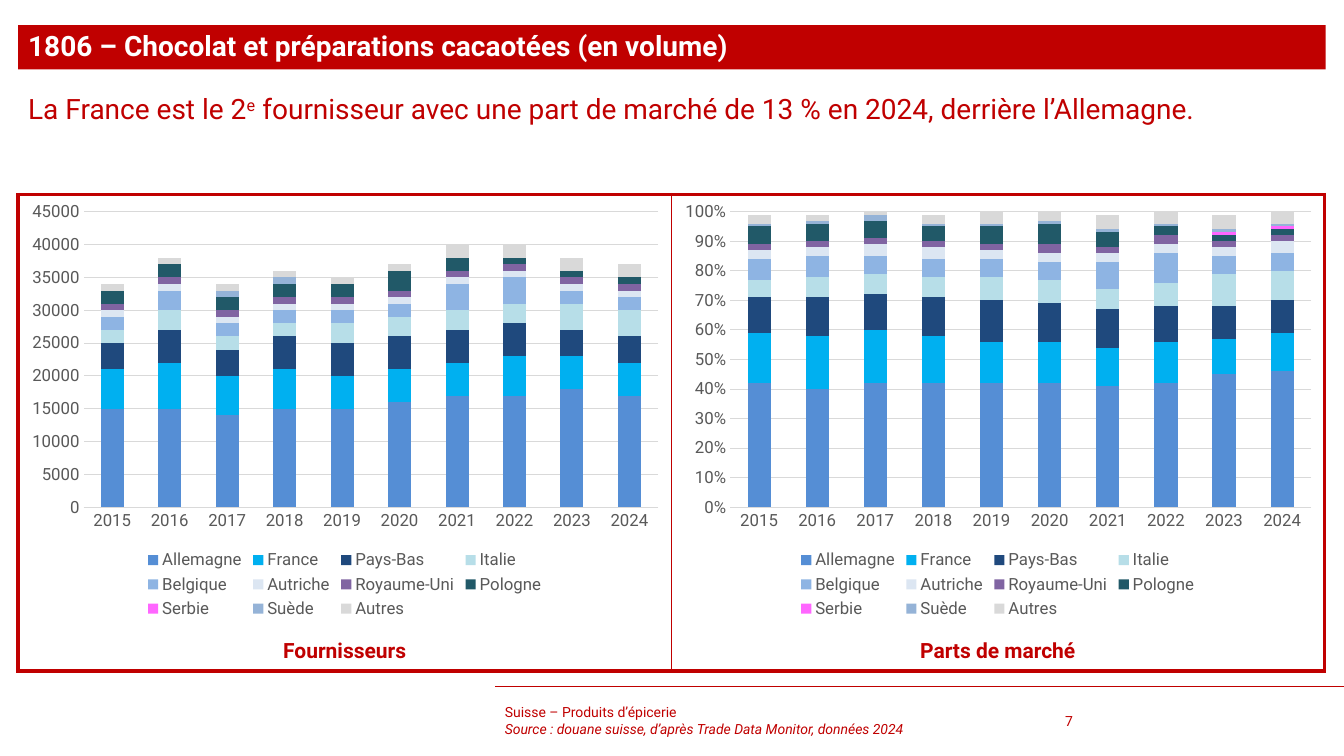
from dataclasses import dataclass

from lxml import etree
from pptx import Presentation
from pptx.chart.data import CategoryChartData
from pptx.dml.color import RGBColor
from pptx.enum.chart import XL_CHART_TYPE, XL_LEGEND_POSITION, XL_TICK_MARK
from pptx.enum.shapes import MSO_CONNECTOR, MSO_SHAPE
from pptx.enum.text import MSO_ANCHOR, MSO_AUTO_SIZE, PP_ALIGN
from pptx.oxml import parse_xml
from pptx.oxml.ns import nsdecls, qn
from pptx.util import Pt

STACKED = XL_CHART_TYPE.COLUMN_STACKED
BOTTOM = XL_LEGEND_POSITION.BOTTOM
NO_TICK = XL_TICK_MARK.NONE
STRAIGHT = MSO_CONNECTOR.STRAIGHT
RECTANGLE = MSO_SHAPE.RECTANGLE
TOP, MIDDLE = MSO_ANCHOR.TOP, MSO_ANCHOR.MIDDLE
GROW = MSO_AUTO_SIZE.SHAPE_TO_FIT_TEXT
LEFT, CENTER = PP_ALIGN.LEFT, PP_ALIGN.CENTER


@dataclass(frozen=True)
class Theme:
    font: str = "Roboto"
    red: str = "C00000"
    white: str = "FFFFFF"
    label: str = "595959"
    grid: str = "D9D9D9"
    heading: float = 20
    caption: float = 15
    chart: float = 12
    footer: float = 10


def rgb(code):
    return RGBColor.from_string(code)


def set_layout(parent, position, frame, inner=False):
    """Place a chart part by fractions of the chart area."""
    for old in parent.findall(qn("c:layout")):
        parent.remove(old)
    target = '<c:layoutTarget val="inner"/>' if inner else ""
    modes = "".join(f'<c:{axis}Mode val="edge"/>' for axis in "xy")
    sizes = "".join(f'<c:{key} val="{value}"/>' for key, value in zip("xywh", frame))
    parent.insert(position, parse_xml(
        f"<c:layout {nsdecls('c')}><c:manualLayout>{target}{modes}{sizes}"
        "</c:manualLayout></c:layout>"))


class SlideBuilder:
    def __init__(self, page, theme):
        self.page = page
        self.theme = theme

    def style(self, font, color, size, **values):
        values = {"name": self.theme.font, "size": Pt(size), **values}
        for name, value in values.items():
            setattr(font, name, value)
        font.color.rgb = rgb(color)

    def fill_text(self, box, paragraphs, size, color=None, anchor=TOP, align=LEFT,
                  spacing=None, bold=False):
        """Each paragraph is a list of (text, format values) spans."""
        frame = box.text_frame
        frame.word_wrap = True
        frame.vertical_anchor = anchor
        for index, spans in enumerate(paragraphs):
            para = frame.add_paragraph() if index else frame.paragraphs[0]
            para.alignment = align
            if spacing:
                para.line_spacing = spacing
            for text, values in spans:
                span = para.add_run()
                span.text = text
                values = dict(values)
                baseline = values.pop("baseline", None)
                self.style(span.font, color or self.theme.red, size,
                           **{"bold": bold, **values})
                if baseline:
                    span._r.get_or_add_rPr().set("baseline", str(baseline))
        return box

    def text(self, place, paragraphs, size, **values):
        box = self.page.shapes.add_textbox(*map(Pt, place))
        return self.fill_text(box, paragraphs, size, **values)

    def banner(self, place, paragraphs, size, **values):
        box = self.page.shapes.add_shape(RECTANGLE, *map(Pt, place))
        box.shadow.inherit = False
        box.fill.solid()
        box.fill.fore_color.rgb = rgb(self.theme.red)
        box.line.fill.background()
        return self.fill_text(box, paragraphs, size, **values)

    def line(self, start, end, width):
        rule = self.page.shapes.add_connector(STRAIGHT, *map(Pt, start + end))
        rule.line.color.rgb = rgb(self.theme.red)
        rule.line.width = Pt(width)
        etree.SubElement(rule._element.spPr, qn("a:effectLst"))

    def frame_table(self, place, borders):
        """One-row empty table; borders holds widths per cell as L, R, T, B."""
        table = self.page.shapes.add_table(1, len(borders), *map(Pt, place)).table
        table.first_row = table.horz_banding = False
        for cell, widths in zip(table.rows[0].cells, borders):
            cell.fill.background()
            properties = cell._tc.get_or_add_tcPr()
            for index, (side, width) in enumerate(zip("LRTB", widths)):
                properties.insert(index, parse_xml(
                    f'<a:ln{side} {nsdecls("a")} w="{Pt(width)}"><a:solidFill>'
                    f'<a:srgbClr val="{self.theme.red}"/></a:solidFill></a:ln{side}>'))

    def chart(self, place, years, series, number_format, maximum, step, plot_frame):
        theme = self.theme
        data = CategoryChartData()
        data.categories = years
        for name, values in series.items():
            data.add_series(name, values)
        chart = self.page.shapes.add_chart(STACKED, *map(Pt, place), data).chart
        chart.has_title = False
        self.style(chart.font, theme.label, theme.chart)

        # Stacked columns
        plot = chart.plots[0]
        plot.gap_width, plot.overlap, plot.vary_by_categories = 150, 100, False
        for column in plot.series:
            column.format.fill.solid()
            column.format.fill.fore_color.rgb = rgb(COUNTRY_COLORS[column.name])

        # Axes
        years_axis, value_axis = chart.category_axis, chart.value_axis
        for axis in (years_axis, value_axis):
            axis.major_tick_mark = axis.minor_tick_mark = NO_TICK
            self.style(axis.tick_labels.font, theme.label, theme.chart)
        value_axis.minimum_scale = 0
        value_axis.maximum_scale = maximum
        value_axis.major_unit = step
        value_axis.tick_labels.number_format = number_format
        value_axis.tick_labels.number_format_is_linked = False
        value_axis.format.line.fill.background()
        for line in (years_axis.format.line, value_axis.major_gridlines.format.line):
            line.color.rgb = rgb(theme.grid)
            line.width = Pt(0.75)

        # Legend and plot placement
        chart.has_legend = True
        legend = chart.legend
        legend.position = BOTTOM
        legend.include_in_layout = False
        self.style(legend.font, theme.label, theme.chart)
        set_layout(legend._element, 1, (0.19, 0.82, 0.62, 0.18))
        set_layout(chart._chartSpace.chart.plotArea, 0, plot_frame, inner=True)


YEARS = [str(year) for year in range(2015, 2025)]
COUNTRY_COLORS = {
    "Allemagne": "558ED5", "France": "00B0F0", "Pays-Bas": "1F497D",
    "Italie": "B7DEE8", "Belgique": "8EB4E3", "Autriche": "DCE6F2",
    "Royaume-Uni": "8064A2", "Pologne": "215968", "Serbie": "FF66FF",
    "Suède": "95B3D7", "Autres": "D9D9D9",
}
# Thousands, one row per country
VOLUMES = [
    [15, 15, 14, 15, 15, 16, 17, 17, 18, 17],
    [6, 7, 6, 6, 5, 5, 5, 6, 5, 5],
    [4, 5, 4, 5, 5, 5, 5, 5, 4, 4],
    [2, 3, 2, 2, 3, 3, 3, 3, 4, 4],
    [2, 3, 2, 2, 2, 2, 4, 4, 2, 2],
    [1] * 10,
    [1] * 10,
    [2, 2, 2, 2, 2, 3, 2, 1, 1, 1],
    [0] * 10,
    [0, 0, 1, 1, 0, 0, 0, 0, 0, 0],
    [1, 1, 1, 1, 1, 1, 2, 2, 2, 2],
]
# Percent, one row per country
SHARES = [
    [42, 40, 42, 42, 42, 42, 41, 42, 45, 46],
    [17, 18, 18, 16, 14, 14, 13, 14, 12, 13],
    [12, 13, 12, 13, 14, 13, 13, 12, 11, 11],
    [6, 7, 7, 7, 8, 8, 7, 8, 11, 10],
    [7, 7, 6, 6, 6, 6, 9, 10, 6, 6],
    [3, 3, 4, 4, 3, 3, 3, 3, 3, 4],
    [2, 2, 2, 2, 2, 3, 2, 3, 2, 2],
    [6, 6, 6, 5, 6, 7, 5, 3, 2, 2],
    [0, 0, 0, 0, 0, 0, 0, 0, 1, 1],
    [1, 1, 2, 1, 1, 1, 1, 1, 1, 1],
    [3, 2, 3, 3, 4, 3, 5, 5, 5, 5],
]
MARGIN, PANEL_TOP, PANEL_WIDTH = 13, 139, 466.5


def main():
    deck = Presentation()
    deck.slide_width, deck.slide_height = Pt(960), Pt(540)
    theme = Theme()
    slide = SlideBuilder(deck.slides.add_slide(deck.slide_layouts[6]), theme)

    # Footer rule and two-panel frame
    slide.line((960, 490.3), (353.5, 490.3), 0.5)
    slide.frame_table((MARGIN, PANEL_TOP, 2 * PANEL_WIDTH, 340.5),
                      [(3, 1, 3, 3), (1, 3, 3, 3)])

    # Heading and key message
    slide.banner((MARGIN, 18, 934, 31.7),
                 [[("1806 – Chocolat et préparations cacaotées (en volume)", {})]],
                 theme.heading, color=theme.white, anchor=MIDDLE, spacing=0.9, bold=True)
    slide.text((MARGIN, 64.8, 933, 58.3), [[
        ("La France est le 2", {}), ("e", {"baseline": 30000}),
        (" fournisseur avec une part de marché de 13 % en 2024, derrière l’Allemagne.", {}),
    ]], theme.heading, spacing=0.9)

    # Chart panels with captions
    panels = [
        ("Fournisseurs", VOLUMES, lambda value: value * 1000, "General", 45000, 5000,
         (0.1, 0.04, 0.88, 0.69)),
        ("Parts de marché", SHARES, lambda value: value / 100, "0%", 1, 0.1,
         (0.09, 0.04, 0.89, 0.69)),
    ]
    for index, (caption, rows, scale, *chart_format) in enumerate(panels):
        left = MARGIN + index * PANEL_WIDTH
        series = {name: [scale(value) for value in row]
                  for name, row in zip(COUNTRY_COLORS, rows)}
        slide.chart((left, PANEL_TOP, PANEL_WIDTH, 306), YEARS, series, *chart_format)
        box = slide.text((left, 451.5, PANEL_WIDTH, 25), [[(caption, {})]],
                         theme.caption, align=CENTER, bold=True)
        box.text_frame.auto_size = GROW

    # Footer and page number
    slide.text((353.5, 500.4, 391, 28.8), [
        [("Suisse – Produits d’épicerie", {})],
        [("Source : douane suisse, d’après Trade Data Monitor, données 2024",
          {"italic": True})],
    ], theme.footer, anchor=MIDDLE)
    slide.text((753.8, 500.4, 71.3, 28.8), [[("7", {})]], theme.footer, anchor=MIDDLE)

    deck.save("out.pptx")


if __name__ == "__main__":
    main()
